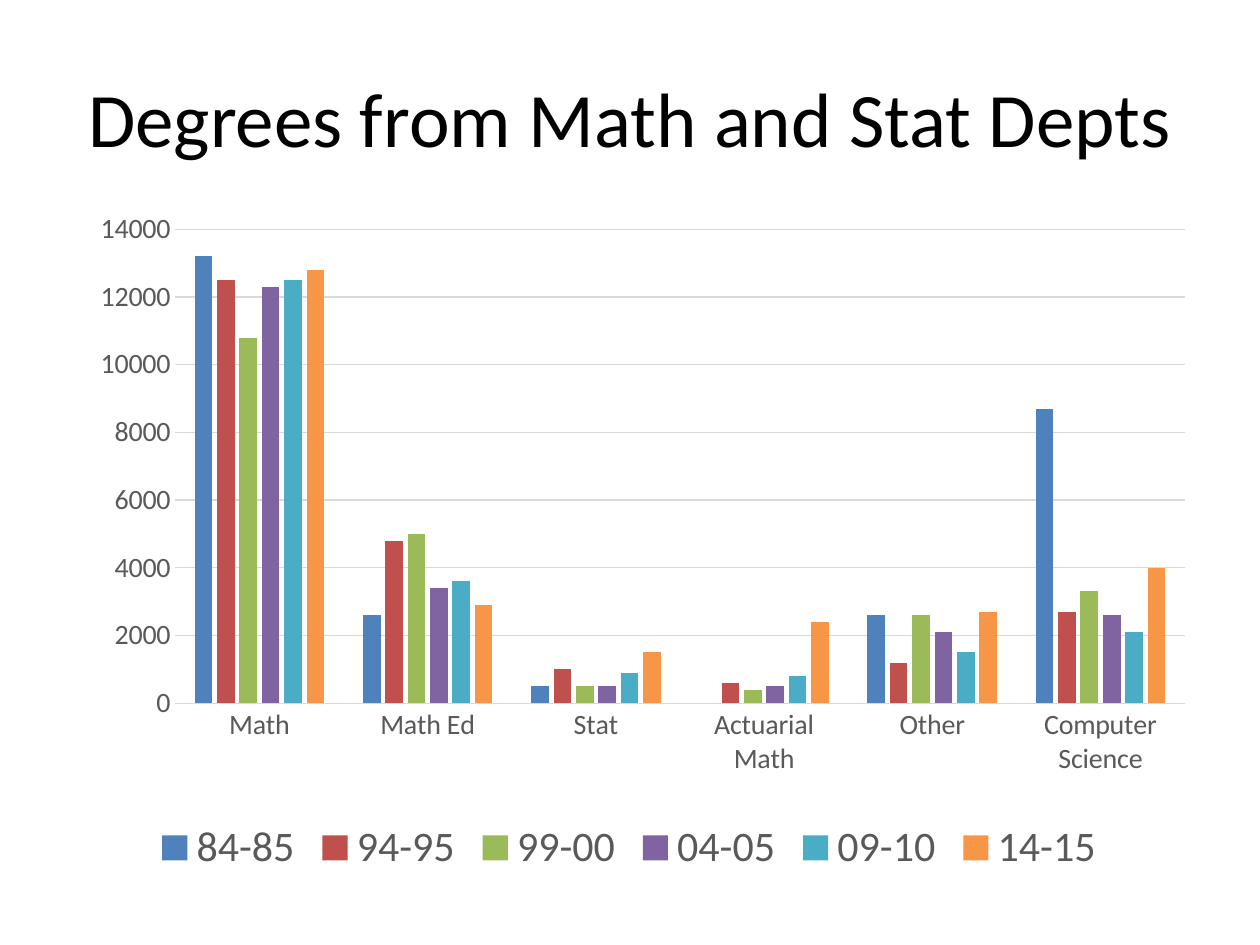
from lxml.etree import SubElement
from pptx import Presentation
from pptx.chart.data import CategoryChartData
from pptx.dml.color import RGBColor
from pptx.enum.chart import XL_CHART_TYPE, XL_LEGEND_POSITION, XL_TICK_MARK
from pptx.enum.text import MSO_ANCHOR, PP_ALIGN
from pptx.oxml.ns import qn
from pptx.util import Pt

PX = 914400 / 126
FONT = "Calibri"
BLACK = RGBColor(0x00, 0x00, 0x00)
GRAY = RGBColor(0x59, 0x59, 0x59)
LIGHT_GRAY = RGBColor(0xD9, 0xD9, 0xD9)
BLUE = RGBColor(0x4F, 0x81, 0xBD)
RED = RGBColor(0xC0, 0x50, 0x4D)
GREEN = RGBColor(0x9B, 0xBB, 0x59)
PURPLE = RGBColor(0x80, 0x64, 0xA2)
TEAL = RGBColor(0x4B, 0xAC, 0xC6)
ORANGE = RGBColor(0xF7, 0x96, 0x46)

DEPARTMENTS = ["Math", "Math Ed", "Stat", "Actuarial Math", "Other", "Computer Science"]
DEGREES = [
    ("84-85", BLUE, [13200, 2600, 500, None, 2600, 8700]),
    ("94-95", RED, [12500, 4800, 1000, 600, 1200, 2700]),
    ("99-00", GREEN, [10800, 5000, 500, 400, 2600, 3300]),
    ("04-05", PURPLE, [12300, 3400, 500, 500, 2100, 2600]),
    ("09-10", TEAL, [12500, 3600, 900, 800, 1500, 2100]),
    ("14-15", ORANGE, [12800, 2900, 1500, 2400, 2700, 4000]),
]


def emu(px):
    return round(px * PX)


def set_font(font, size, color):
    font.name = FONT
    font.size = Pt(size)
    font.bold = False
    font.color.rgb = color


def set_line(line, color, width=0.75):
    line.color.rgb = color
    line.width = Pt(width)


def write_text(frame, text, size=44, color=BLACK, align=PP_ALIGN.CENTER,
               anchor=MSO_ANCHOR.MIDDLE):
    frame.word_wrap = True
    frame.vertical_anchor = anchor
    paragraph = frame.paragraphs[0]
    paragraph.alignment = align
    run = paragraph.add_run()
    run.text = text
    set_font(run.font, size, color)


def place_plot(chart, x, y, w, h):
    """Fix the inner plot area, in fractions of the chart."""
    plot_area = chart._chartSpace.chart.plotArea
    for old in plot_area.findall(qn("c:layout")):
        plot_area.remove(old)
    layout = SubElement(plot_area, qn("c:layout"))
    plot_area.insert(0, layout)
    manual = SubElement(layout, qn("c:manualLayout"))
    settings = {"layoutTarget": "inner", "xMode": "edge", "yMode": "edge",
                "x": x, "y": y, "w": w, "h": h}
    for tag, value in settings.items():
        SubElement(manual, qn(f"c:{tag}")).set("val", str(value))


class SlideBuilder:
    def __init__(self, presentation):
        self.slide = presentation.slides.add_slide(presentation.slide_layouts[5])

    def title(self, text, x, y, w, h):
        title = self.slide.shapes.title
        title.left, title.top, title.width, title.height = map(emu, (x, y, w, h))
        write_text(title.text_frame, text)

    def column_chart(self, categories, series_rows, x, y, w, h):
        data = CategoryChartData()
        data.categories = categories
        for name, _, values in series_rows:
            data.add_series(name, values)
        chart = self.slide.shapes.add_chart(
            XL_CHART_TYPE.COLUMN_CLUSTERED, *map(emu, (x, y, w, h)), data).chart
        set_font(chart.font, 10, BLACK)
        chart.has_title = False

        columns = chart.plots[0]
        columns.gap_width = 219
        columns.overlap = -27
        columns.vary_by_categories = False
        for series, (_, color, _) in zip(columns.series, series_rows):
            series.format.fill.solid()
            series.format.fill.fore_color.rgb = color
            series.invert_if_negative = False

        for axis in (chart.category_axis, chart.value_axis):
            axis.major_tick_mark = axis.minor_tick_mark = XL_TICK_MARK.NONE
            set_font(axis.tick_labels.font, 16, GRAY)
        set_line(chart.category_axis.format.line, LIGHT_GRAY)
        degrees_axis = chart.value_axis
        degrees_axis.minimum_scale = 0
        degrees_axis.maximum_scale = 14000
        degrees_axis.major_unit = 2000
        degrees_axis.format.line.fill.background()
        set_line(degrees_axis.major_gridlines.format.line, LIGHT_GRAY)

        chart.has_legend = True
        chart.legend.position = XL_LEGEND_POSITION.BOTTOM
        chart.legend.include_in_layout = False
        set_font(chart.legend.font, 24, GRAY)
        return chart


def main():
    presentation = Presentation()
    presentation.slide_width, presentation.slide_height = emu(1260), emu(945)
    builder = SlideBuilder(presentation)
    builder.title("Degrees from Math and Stat Depts", 63, 38, 1134, 158)
    degrees_chart = builder.column_chart(DEPARTMENTS, DEGREES, 62, 195, 1134, 687)
    place_plot(degrees_chart, 0.1, 0.05, 0.89, 0.69)
    presentation.save("out.pptx")


if __name__ == "__main__":
    main()
